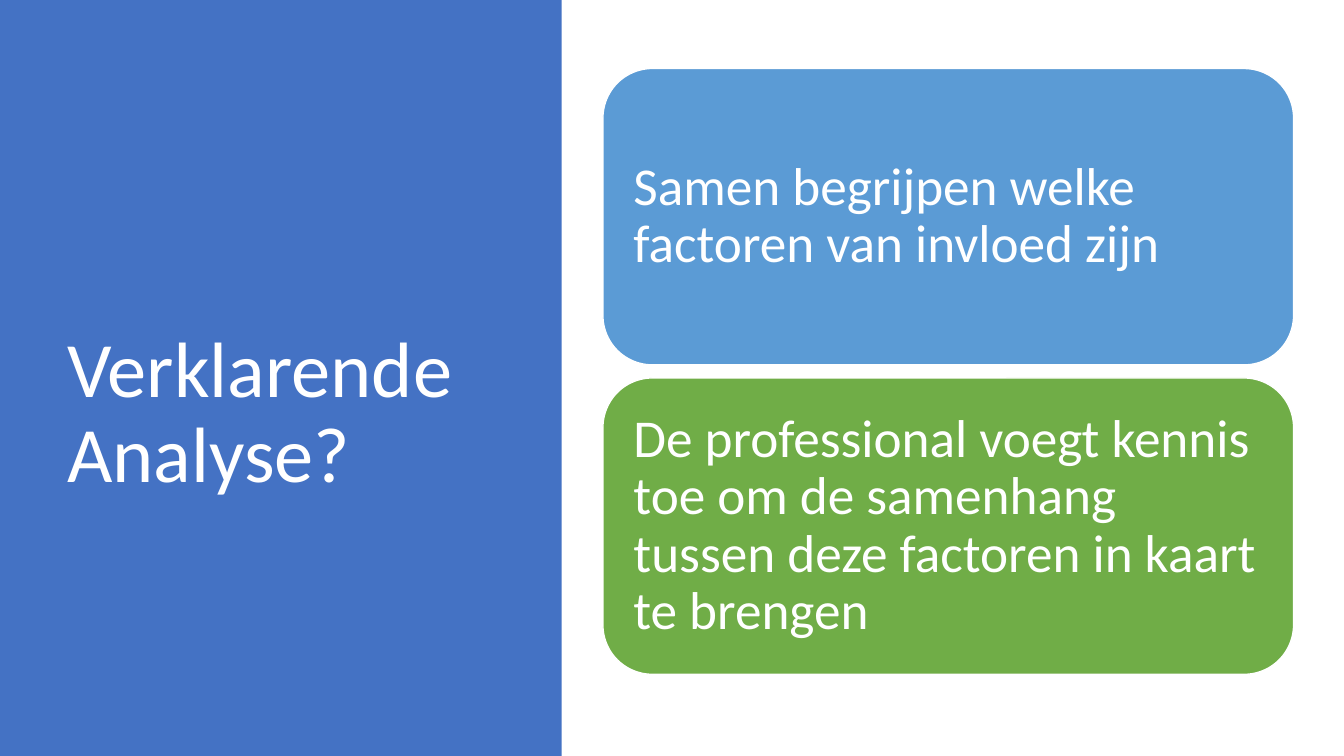
"""Build the slide "Verklarende Analyse?" with a title panel and two cards."""
from pptx import Presentation
from pptx.dml.color import RGBColor
from pptx.enum.shapes import MSO_SHAPE
from pptx.enum.text import MSO_ANCHOR, PP_ALIGN
from pptx.util import Inches, Pt

WHITE = RGBColor(0xFF, 0xFF, 0xFF)
NAVY = RGBColor(0x44, 0x72, 0xC4)
BLUE = RGBColor(0x5B, 0x9B, 0xD5)
GREEN = RGBColor(0x70, 0xAD, 0x47)

TITLE = "\vVerklarende Analyse?"
CARDS = [
    ("Samen begrijpen welke factoren van invloed zijn", BLUE),
    ("De professional voegt kennis toe om de samenhang "
     "tussen deze factoren in kaart te brengen", GREEN),
]
LEFT, TOP, WIDTH, HEIGHT, PITCH = 5.98, 0.68, 6.85, 2.94, 3.07
INSET = Inches(0.16)


def add_box(slide, kind, box, color):
    shape = slide.shapes.add_shape(kind, *map(Inches, box))
    shape.shadow.inherit = False
    shape.fill.solid()
    shape.fill.fore_color.rgb = color
    shape.line.fill.background()
    return shape


def set_text(frame, text, size):
    frame.word_wrap = True
    frame.vertical_anchor = MSO_ANCHOR.MIDDLE
    frame.text = text
    para = frame.paragraphs[0]
    para.alignment = PP_ALIGN.LEFT
    para.line_spacing = 0.9
    para.font.name = "Calibri"
    para.font.size = Pt(size)
    para.font.color.rgb = WHITE


def main():
    deck = Presentation()
    deck.slide_width, deck.slide_height = Inches(13.33), Inches(7.5)
    slide = deck.slides.add_slide(deck.slide_layouts[6])

    add_box(slide, MSO_SHAPE.RECTANGLE, (0, 0, 5.57, 7.5), NAVY)
    title = slide.shapes.add_textbox(*map(Inches, (0.57, 0.68, 4.16, 6.02)))
    set_text(title.text_frame, TITLE, 56)

    for row, (text, color) in enumerate(CARDS):
        box = (LEFT, TOP + row * PITCH, WIDTH, HEIGHT)
        card = add_box(slide, MSO_SHAPE.ROUNDED_RECTANGLE, box, color)
        card.line.color.rgb = WHITE
        card.line.width = Pt(1)
        frame = card.text_frame
        frame.margin_left = frame.margin_right = INSET
        frame.margin_top = frame.margin_bottom = INSET
        set_text(frame, text, 38)

    deck.save("out.pptx")


if __name__ == "__main__":
    main()
